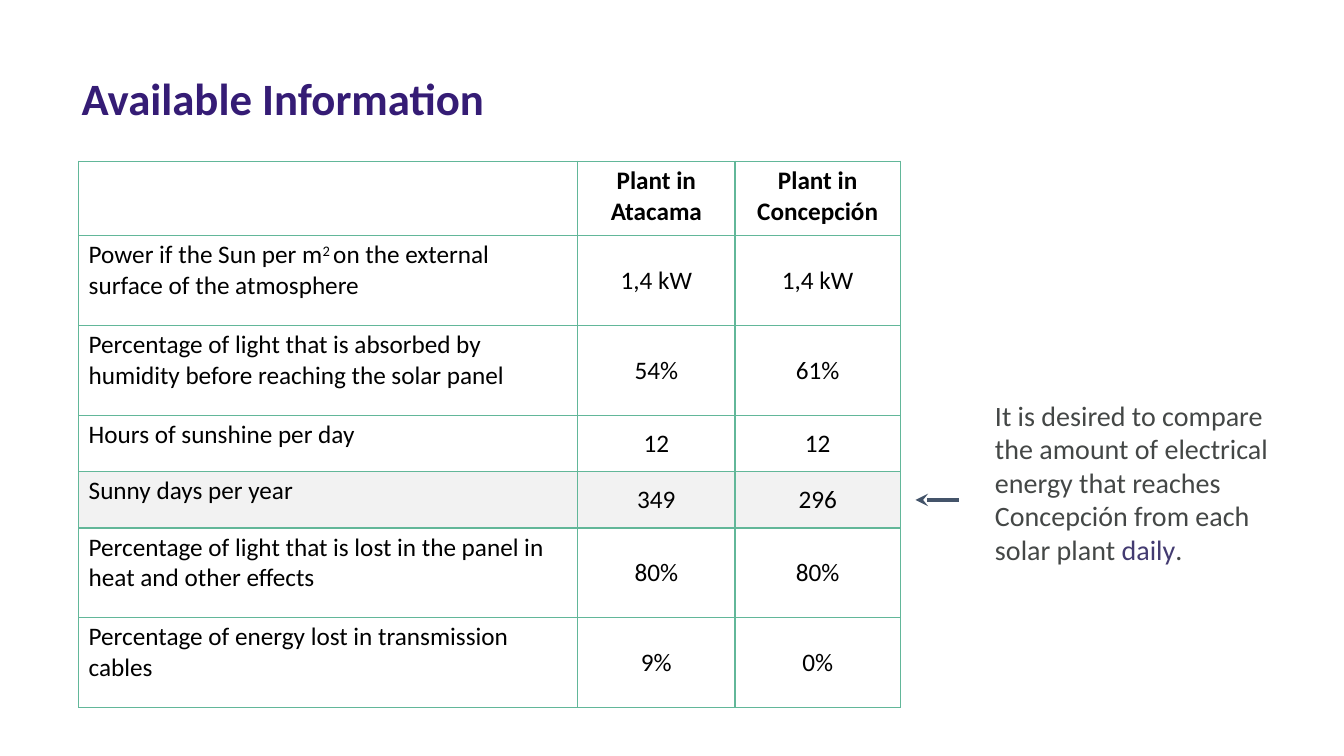
import pptx
import pptx.dml.color
import pptx.enum.shapes
import pptx.enum.text
import pptx.oxml.ns
import pptx.util
import lxml.etree
from dataclasses import dataclass

Inches = pptx.util.Inches
Pt = pptx.util.Pt
ALIGN = pptx.enum.text.PP_ALIGN
ANCHOR = pptx.enum.text.MSO_ANCHOR


@dataclass(frozen=True)
class Theme:
    font: str = "Calibri"
    title_size: int = 32
    table_size: int = 18
    note_size: int = 20
    title: str = "351C75"
    body: str = "000000"
    note: str = "444746"
    accent: str = "433B71"
    border: str = "62B799"
    highlight: str = "F2F2F2"
    arrow: str = "44546A"


THEME = Theme()
COLUMN_WIDTHS = (4.95, 1.56, 1.64)
ROW_HEIGHTS = (0.74, 0.89, 0.89, 0.56, 0.56, 0.89, 0.89)
HIGHLIGHTED_ROW = 4
PLANT_DATA = (
    ("", "Plant in Atacama", "Plant in Concepción"),
    (("Power if the Sun per m", "2 ", "on the external surface of the atmosphere"),
     "1,4 kW", "1,4 kW"),
    ("Percentage of light that is absorbed by humidity before reaching the solar panel",
     "54%", "61%"),
    ("Hours of sunshine per day", "12", "12"),
    ("Sunny days per year", "349", "296"),
    ("Percentage of light that is lost in the panel in heat and other effects",
     "80%", "80%"),
    ("Percentage of energy lost in transmission cables", "9%", "0%"),
)


def rgb(color):
    return pptx.dml.color.RGBColor.from_string(color)


def format_font(font, size, color, bold=False):
    font.name = THEME.font
    font.size = Pt(size)
    font.bold = bold
    font.color.rgb = rgb(color)


def add_xml(parent, tag, **attributes):
    return lxml.etree.SubElement(parent, pptx.oxml.ns.qn(tag), **attributes)


def add_title(slide, left, top, width, height):
    title = slide.shapes.title
    title.left, title.top = Inches(left), Inches(top)
    title.width, title.height = Inches(width), Inches(height)
    frame = title.text_frame
    frame.text = "Available Information"
    frame.word_wrap = True
    frame.vertical_anchor = ANCHOR.TOP
    heading = frame.paragraphs[0]
    heading.alignment = ALIGN.LEFT
    format_font(heading.runs[0].font, THEME.title_size, THEME.title, True)


def outline_cell(cell):
    properties = cell._tc.get_or_add_tcPr()
    for side in ("a:lnL", "a:lnR", "a:lnT", "a:lnB"):
        border = add_xml(properties, side, w=str(Pt(1)))
        add_xml(add_xml(border, "a:solidFill"), "a:srgbClr", val=THEME.border)


def fill_cell(cell, content, row, column):
    outline_cell(cell)
    if row == HIGHLIGHTED_ROW:
        cell.fill.solid()
        cell.fill.fore_color.rgb = rgb(THEME.highlight)
    else:
        cell.fill.background()
    cell.margin_left = cell.margin_right = Inches(0.1)
    cell.margin_top = cell.margin_bottom = Inches(0.04)
    is_value = row > 0 and column > 0
    cell.vertical_anchor = ANCHOR.MIDDLE if is_value else ANCHOR.TOP
    entry = cell.text_frame.paragraphs[0]
    entry.alignment = ALIGN.CENTER if column else ALIGN.LEFT
    pieces = (content,) if isinstance(content, str) else content
    for index, piece in enumerate(pieces):
        if piece:
            run = entry.add_run()
            run.text = piece
            format_font(run.font, THEME.table_size, THEME.body, row == 0)
            if index == 1:
                run._r.get_or_add_rPr().set("baseline", "30000")


def add_plant_table(slide, left, top):
    table = slide.shapes.add_table(
        len(ROW_HEIGHTS), len(COLUMN_WIDTHS), Inches(left), Inches(top),
        Inches(sum(COLUMN_WIDTHS)), Inches(sum(ROW_HEIGHTS))).table
    table.first_row = table.horz_banding = False
    for column, width in zip(table.columns, COLUMN_WIDTHS):
        column.width = Inches(width)
    for row, height in zip(table.rows, ROW_HEIGHTS):
        row.height = Inches(height)
    for row, contents in enumerate(PLANT_DATA):
        for column, content in enumerate(contents):
            fill_cell(table.cell(row, column), content, row, column)


def add_daily_note(slide, left, top, width, height):
    frame = slide.shapes.add_textbox(
        Inches(left), Inches(top), Inches(width), Inches(height)).text_frame
    frame.word_wrap = True
    note = frame.paragraphs[0]
    for text, color in (
        ("It is desired to compare the amount of electrical energy that reaches "
         "Concepción from each solar plant ", THEME.note),
        ("daily", THEME.accent),
        (".", THEME.note),
    ):
        run = note.add_run()
        run.text = text
        format_font(run.font, THEME.note_size, color)


def add_row_arrow(slide, left, middle, width):
    arrow = slide.shapes.add_connector(
        pptx.enum.shapes.MSO_CONNECTOR.STRAIGHT,
        Inches(left + width), Inches(middle), Inches(left), Inches(middle))
    arrow.line.width = Pt(3)
    arrow.line.color.rgb = rgb(THEME.arrow)
    add_xml(arrow.line._get_or_add_ln(), "a:tailEnd", type="stealth")
    add_xml(arrow._element.spPr, "a:effectLst")


def build_information_slide(deck):
    slide = deck.slides.add_slide(deck.slide_layouts.get_by_name("Title Only"))
    add_title(slide, 0.71, 0.65, 8.59, 0.64)
    add_plant_table(slide, 0.78, 1.6)
    add_daily_note(slide, 9.77, 3.9, 3.15, 1.78)
    add_row_arrow(slide, 9.08, 4.96, 0.43)


def main():
    deck = pptx.Presentation()
    deck.slide_width = Inches(13.33)
    deck.slide_height = Inches(7.5)
    build_information_slide(deck)
    deck.save("out.pptx")


if __name__ == "__main__":
    main()
